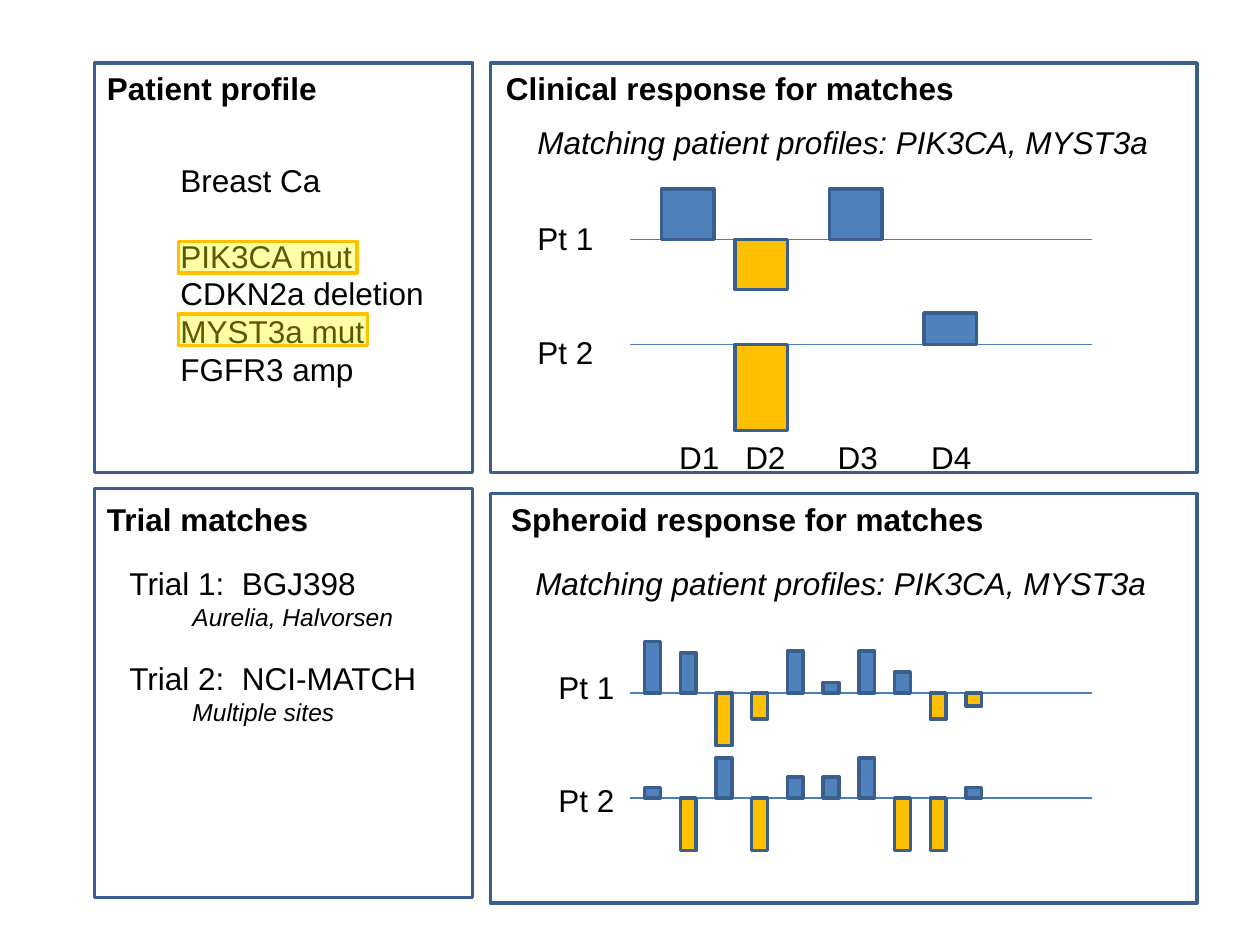
from dataclasses import dataclass

from lxml import etree
from pptx import Presentation
from pptx import util as u
from pptx.dml.color import RGBColor
from pptx.enum import shapes, text
from pptx.oxml import ns


@dataclass(frozen=True)
class Theme:
    font: str = "Arial"
    body: int = 18
    small: int = 14
    leading: float = 1.2
    ink: str = "000000"
    outline: str = "3A5F8C"
    axis: str = "4B7EBC"
    gain: str = "4F81BD"
    loss: str = "FFC000"
    marker: str = "FFFF00"
    marker_alpha: int = 35000
    border: float = 2
    hairline: float = 0.75


@dataclass(frozen=True)
class Line:
    text: str
    size: int = Theme.body
    bold: bool = False
    italic: bool = False
    gap: int = 0


class Board:
    COLUMNS, ROWS = 120, 90

    def __init__(self, presentation, theme):
        self.theme = theme
        self.slide = presentation.slides.add_slide(presentation.slide_layouts[6])
        self.column = presentation.slide_width / self.COLUMNS
        self.row = presentation.slide_height / self.ROWS

    def place(self, left, top, width, height):
        return (round(left * self.column), round(top * self.row),
                round(width * self.column), round(height * self.row))

    def rectangle(self, left, top, width, height, fill=None, line=None):
        shape = self.slide.shapes.add_shape(
            shapes.MSO_SHAPE.RECTANGLE, *self.place(left, top, width, height))
        shape.shadow.inherit = False
        if fill:
            shape.fill.solid()
            shape.fill.fore_color.rgb = RGBColor.from_string(fill)
        else:
            shape.fill.background()
        shape.line.color.rgb = RGBColor.from_string(line or self.theme.outline)
        shape.line.width = u.Pt(self.theme.border)
        return shape

    def highlight(self, left, top, width, height):
        shape = self.rectangle(left, top, width, height, self.theme.marker, self.theme.loss)
        color = shape._element.spPr.find(ns.qn("a:solidFill"))[0]
        etree.SubElement(color, ns.qn("a:alpha"), val=str(self.theme.marker_alpha))

    def label(self, left, top, width, height, *lines, tabs=()):
        shape = self.slide.shapes.add_textbox(*self.place(left, top, width, height))
        frame = shape.text_frame
        frame.word_wrap = bool(tabs)
        frame.auto_size = text.MSO_AUTO_SIZE.SHAPE_TO_FIT_TEXT
        frame.text = "\n".join(line.text for line in lines)
        for paragraph, line in zip(frame.paragraphs, lines):
            leading = line.size * self.theme.leading
            paragraph.line_spacing = u.Pt(leading)
            if line.gap:
                paragraph.space_before = u.Pt(line.gap * leading)
            if tabs:
                stops = etree.SubElement(paragraph._p.get_or_add_pPr(), ns.qn("a:tabLst"))
                for stop in tabs:
                    etree.SubElement(stops, ns.qn("a:tab"),
                                     pos=str(round(stop * self.column)), algn="l")
            for run in paragraph.runs:
                run.font.name = self.theme.font
                run.font.size = u.Pt(line.size)
                run.font.bold, run.font.italic = line.bold, line.italic
                run.font.color.rgb = RGBColor.from_string(self.theme.ink)

    def axis(self, left, right, row):
        x, y, width, _ = self.place(left, row, right - left, 0)
        line = self.slide.shapes.add_connector(
            shapes.MSO_CONNECTOR.STRAIGHT, x, y, x + width, y)
        line.line.color.rgb = RGBColor.from_string(self.theme.axis)
        line.line.width = u.Pt(self.theme.hairline)
        etree.SubElement(line._element.spPr, ns.qn("a:effectLst"))

    def bars(self, baseline, width, positions, values):
        self.axis(60, 104, baseline)
        for left, value in zip(positions, values):
            if value:
                fill = self.theme.gain if value > 0 else self.theme.loss
                self.rectangle(left, baseline - max(value, 0), width, abs(value), fill)


def main():
    presentation = Presentation()
    presentation.slide_width, presentation.slide_height = u.Inches(10), u.Inches(7.5)
    theme = Theme()
    board = Board(presentation, theme)

    for left, top, width in ((9, 6, 36), (46.7, 6, 67.3), (46.7, 47, 67.3), (9, 46.5, 36)):
        board.rectangle(left, top, width, 39)

    for left, top, width, title in (
        (9, 6, 22.5, "Patient profile"),
        (47, 6, 45.5, "Clinical response for matches"),
        (47.5, 47, 47.9, "Spheroid response for matches"),
        (9, 47, 21.6, "Trial matches"),
    ):
        board.label(left, top, width, 4.8, Line(title, bold=True))

    board.label(16, 14.75, 25.8, 37.6, Line("Breast Ca"), Line("PIK3CA mut", gap=1),
                Line("CDKN2a deletion"), Line("MYST3a mut"), Line("FGFR3 amp"))
    board.highlight(17, 23, 17, 3)
    board.highlight(17, 29.9, 18, 3)

    for left, top, patient_left, patient_top in ((50, 11.15, 50, 20.3), (49.8, 53.15, 52, 63)):
        board.label(left, top, 61.2, 4.8,
                    Line("Matching patient profiles: PIK3CA, MYST3a", italic=True))
        board.label(patient_left, patient_top, 7.8, 15.7, Line("Pt 1"), Line("Pt 2", gap=2))

    drugs = (63, 70, 79, 88)
    board.bars(22.8, 5, drugs, (4.8, -4.8, 4.8, 0))
    board.bars(32.8, 5, drugs, (0, -8.2, 0, 3))
    board.label(63.5, 41.15, 30.5, 4.8, Line("D1\tD2\tD3\tD4"), tabs=(6.3, 15.1, 24))

    spheroids = [61.4 + 3.4 * index for index in range(10)]
    board.bars(66, 1.5, spheroids, (4.9, 3.8, -5, -2.5, 4, 1, 4, 2, -2.5, -1.25))
    board.bars(76, 1.5, spheroids, (1, -5, 3.8, -5, 2, 2, 3.8, -5, -5, 1))

    for top, width, trial, sites in (
        (53.15, 34.5, "Trial 1:  BGJ398", "Aurelia, Halvorsen"),
        (62.15, 30, "Trial 2:  NCI-MATCH", "Multiple sites"),
    ):
        board.label(11.15, top, width, 7.7, Line(trial),
                    Line(f"\t{sites}", size=theme.small, italic=True))

    presentation.save("out.pptx")


if __name__ == "__main__":
    main()
